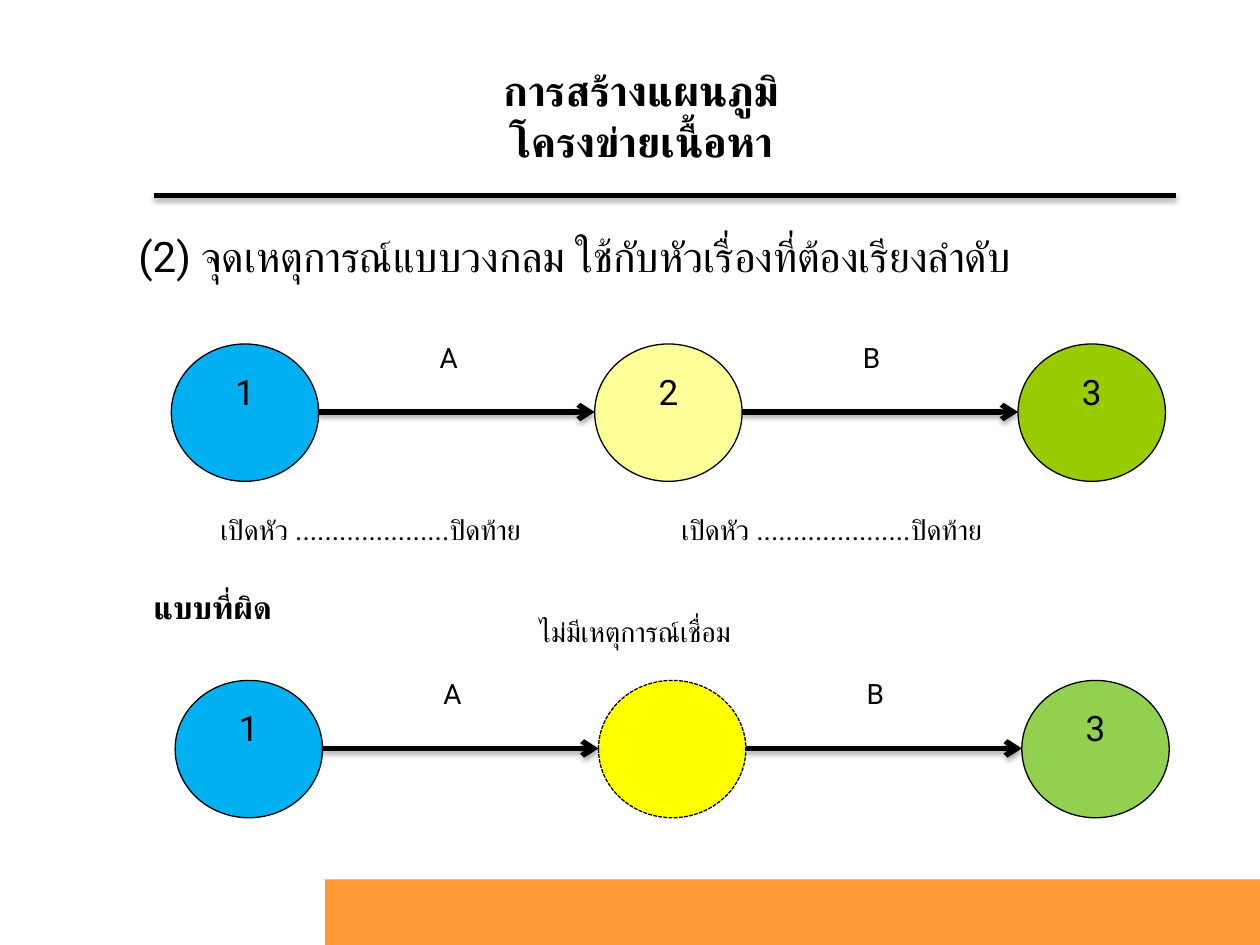
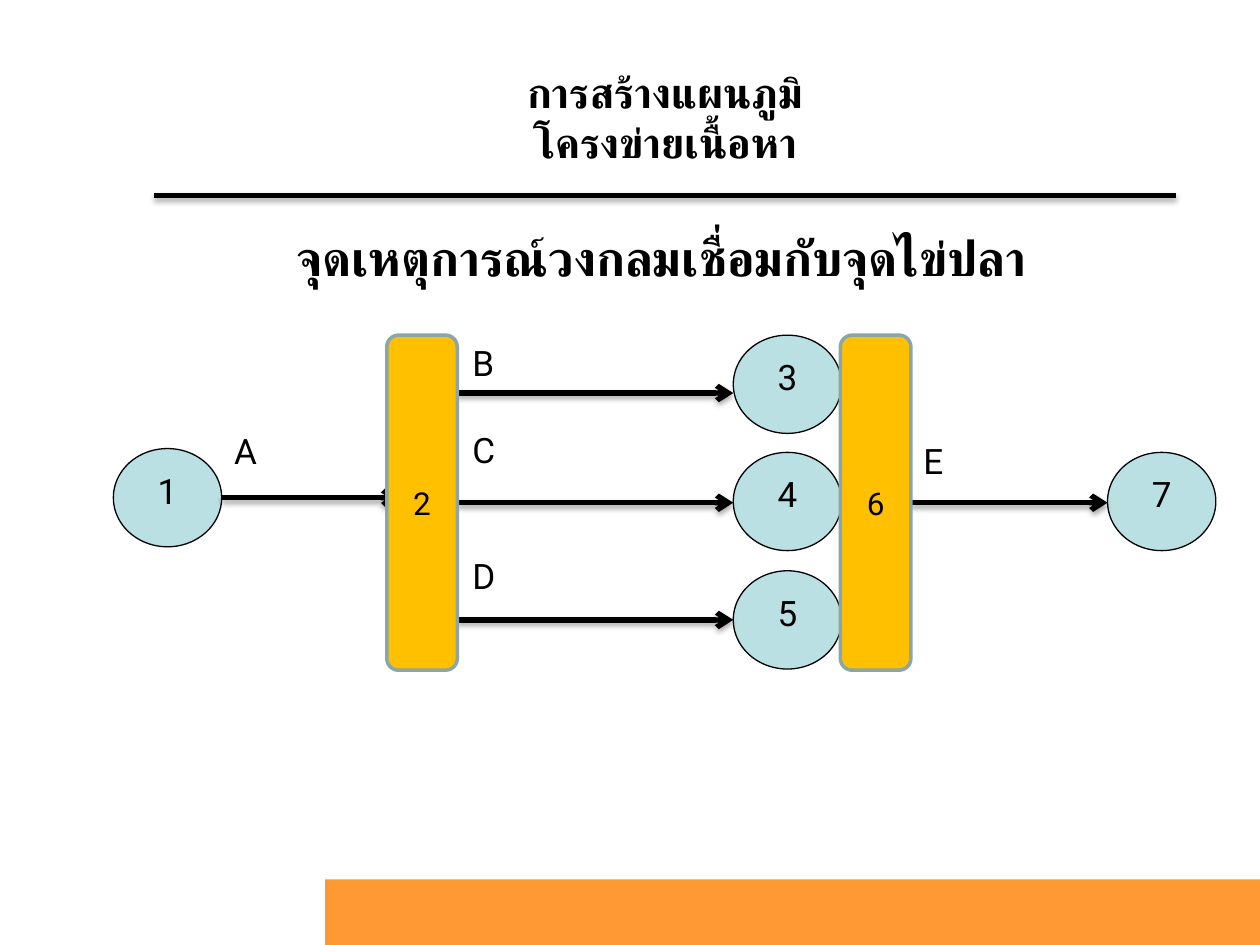
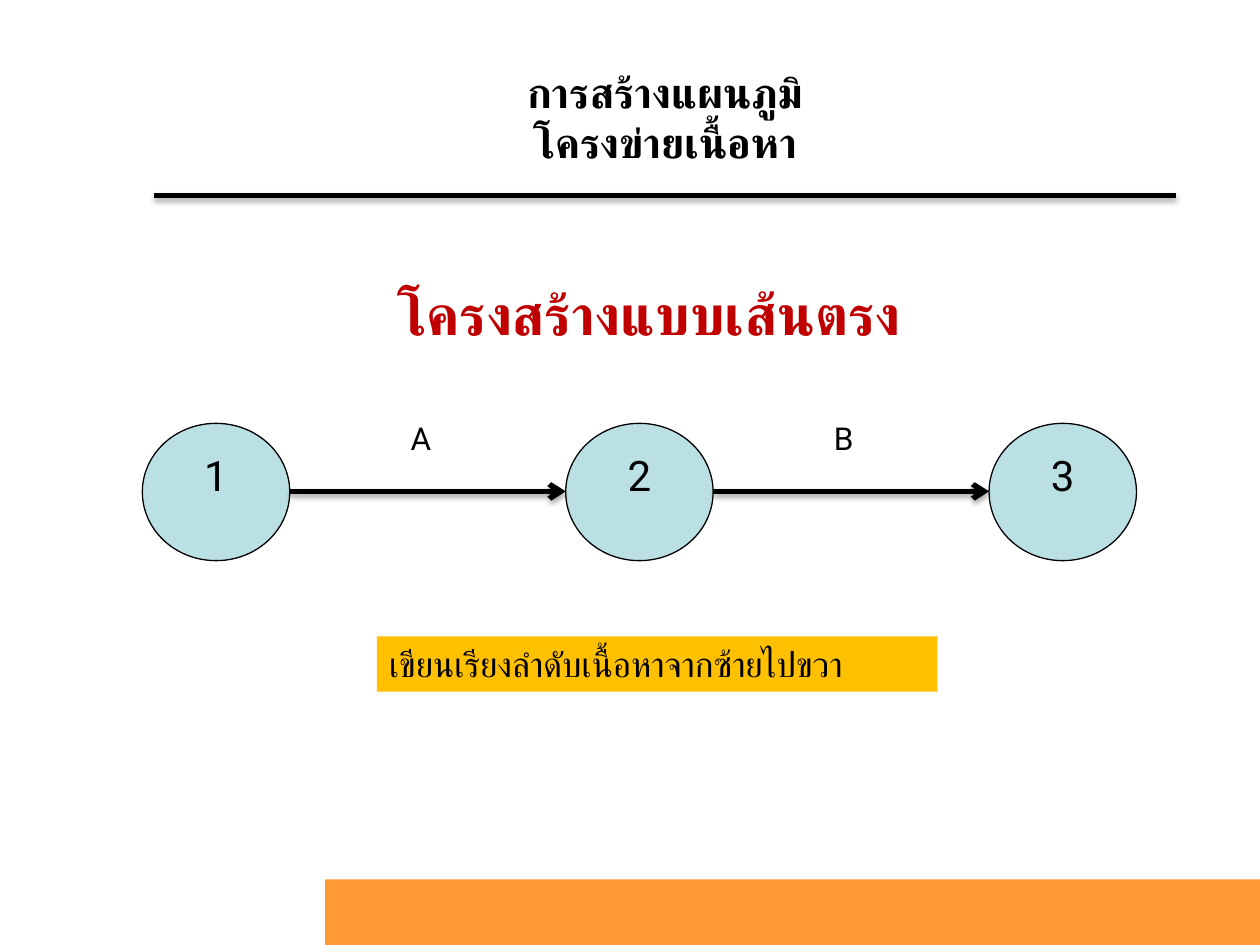
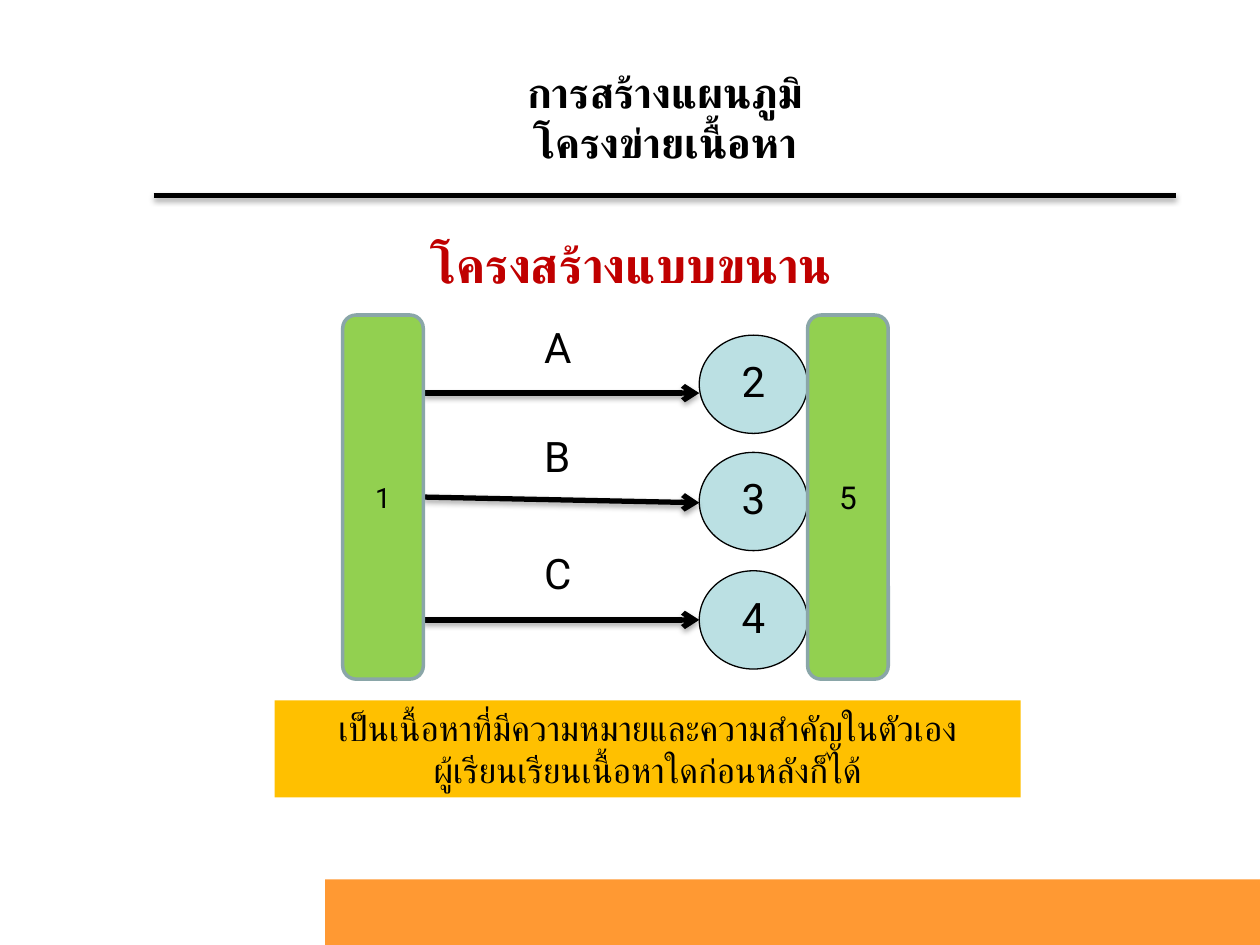
from dataclasses import dataclass

from lxml.etree import SubElement
from pptx import Presentation
from pptx.dml.color import RGBColor
from pptx.enum.dml import MSO_LINE
from pptx.enum.shapes import MSO_CONNECTOR, MSO_SHAPE
from pptx.enum.text import MSO_ANCHOR, PP_ALIGN
from pptx.oxml.ns import qn
from pptx.util import Emu, Pt

EMU_PER_PX = 9144  # 100 px to the inch


@dataclass(frozen=True)
class Theme:
    font: str = "Roboto"
    ink: str = "000000"
    red: str = "C00000"
    orange: str = "FF9933"
    gold: str = "FFC000"
    blue: str = "00B0F0"
    cream: str = "FFFF99"
    lime: str = "99CC00"
    yellow: str = "FFFF00"
    green: str = "92D050"
    aqua: str = "BBE0E3"
    bar_edge: str = "8AA6A8"
    caption: int = 16
    label: int = 18
    text: int = 20
    title: int = 24
    heading: int = 28
    big_heading: int = 32


THEME = Theme()
HEADER = "การสร้างแผนภูมิ\nโครงข่ายเนื้อหา"

# Chain of three circles
CHAIN_WIDTH, CHAIN_HEIGHT, CHAIN_PITCH = 117, 109, 336
CHAIN_LABEL_X, CHAIN_LABEL_Y = 203, -8

# Three parallel rows: an arrow leading to a circle
NODE_WIDTH, NODE_HEIGHT = 86, 78
ROW_ARROW_LENGTH = 219
ROW_HEIGHT_SUM = 187  # distance between the first and the third circle
ROW_ARROW_Y = (46, 133, 226)


def px(length):
    return Emu(length * EMU_PER_PX)


def color(code):
    return RGBColor.from_string(code)


# ---- Basic parts ----

def write(shape, text, size, ink=THEME.ink, bold=False, align=PP_ALIGN.LEFT,
          anchor=MSO_ANCHOR.TOP):
    frame = shape.text_frame
    frame.word_wrap = True
    frame.vertical_anchor = anchor
    for index, line in enumerate([text] if isinstance(text, str) else text):
        para = frame.add_paragraph() if index else frame.paragraphs[0]
        para.text = line
        para.alignment = align
        for span in para.runs:
            font = span.font
            font.name, font.size, font.bold = THEME.font, Pt(size), bold
            font.color.rgb = color(ink)
            SubElement(font._element, qn("a:cs"), typeface=THEME.font)


def add_text(page, box, text, size, **style):
    shape = page.shapes.add_textbox(*map(px, box))
    write(shape, text, size, **style)
    return shape


def add_title(page, box, text, size, ink=THEME.ink):
    add_text(page, box, text, size, ink=ink, bold=True,
             align=PP_ALIGN.CENTER, anchor=MSO_ANCHOR.MIDDLE)


def add_figure(page, kind, box, fill, edge=None, edge_width=0.75):
    shape = page.shapes.add_shape(kind, *map(px, box))
    shape.shadow.inherit = False
    shape.fill.solid()
    shape.fill.fore_color.rgb = color(fill)
    if edge:
        shape.line.color.rgb = color(edge)
        shape.line.width = Pt(edge_width)
    else:
        shape.line.fill.background()
    return shape


def add_circle(page, box, fill, text="", size=THEME.text):
    circle = add_figure(page, MSO_SHAPE.OVAL, box, fill, THEME.ink)
    if text:
        write(circle, text, size, align=PP_ALIGN.CENTER)
    return circle


def add_bar(page, box, fill, text, size=THEME.label):
    bar = add_figure(page, MSO_SHAPE.ROUNDED_RECTANGLE, box, fill, THEME.bar_edge, 2)
    write(bar, text, size, align=PP_ALIGN.CENTER, anchor=MSO_ANCHOR.MIDDLE)
    return bar


def add_note(page, box, text, align=PP_ALIGN.LEFT):
    note = add_figure(page, MSO_SHAPE.RECTANGLE, box, THEME.gold)
    write(note, text, THEME.text, align=align)


def add_line(page, left, right, y, arrow=True):
    line = page.shapes.add_connector(
        MSO_CONNECTOR.STRAIGHT, px(left), px(y), px(right), px(y))
    line.line.color.rgb = color(THEME.ink)
    line.line.width = Pt(3)
    if arrow:
        SubElement(line.line._get_or_add_ln(), qn("a:tailEnd"), type="arrow")
    # Soft shadow straight below the line
    effects = SubElement(line._element.spPr, qn("a:effectLst"))
    shadow = SubElement(effects, qn("a:outerShdw"), blurRad="40000", dist="23000",
                        dir="5400000", rotWithShape="0")
    tone = SubElement(shadow, qn("a:srgbClr"), val=THEME.ink)
    SubElement(tone, qn("a:alpha"), val="35000")
    return line


# ---- Regions ----

def add_frame(page, title_left=78, title_top=30):
    """Header, rule and footer band shared by all slides."""
    add_title(page, (title_left, title_top, 900, 125), HEADER, THEME.title)
    add_line(page, 122, 933, 155, arrow=False)
    add_figure(page, MSO_SHAPE.RECTANGLE, (258, 698, 742, 52), THEME.orange)


def add_chain(page, left, top, fills, numbers, number_size, label_size):
    """Three circles in a line, joined by the arrows A and B."""
    circles = []
    for index, (fill, number) in enumerate(zip(fills, numbers)):
        x = left + index * CHAIN_PITCH
        circles.append(add_circle(page, (x, top, CHAIN_WIDTH, CHAIN_HEIGHT),
                                  fill, number, number_size))
    for index, label in enumerate("AB"):
        x = left + index * CHAIN_PITCH
        add_line(page, x + CHAIN_WIDTH, x + CHAIN_PITCH, top + CHAIN_HEIGHT // 2)
        add_text(page, (x + CHAIN_LABEL_X, top + CHAIN_LABEL_Y, 38, 37),
                 label, label_size)
    return circles


def add_rows(page, left, top, labels, numbers, label_x, label_lifts, size):
    """Three labelled arrows to circles; returns the middle arrow."""
    arrows = []
    for index, label in enumerate(labels):
        arrow_y = top + ROW_ARROW_Y[index]
        circle_left = left + ROW_ARROW_LENGTH
        circle_top = top + index * ROW_HEIGHT_SUM // 2
        add_circle(page, (circle_left, circle_top, NODE_WIDTH, NODE_HEIGHT),
                   THEME.aqua, numbers[index], size)
        arrows.append(add_line(page, left, circle_left, arrow_y))
        add_text(page, (left + label_x, arrow_y - label_lifts[index], 38, 44),
                 label, size)
    return arrows[1]


# ---- Slides ----

def build_circle_events(page):
    body = add_text(page, (50, 178, 900, 78),
                    "(2)\tจุดเหตุการณ์แบบวงกลม ใช้กับหัวเรื่องที่ต้องเรียงลำดับ", THEME.title)
    indent = body.text_frame.paragraphs[0]._p.get_or_add_pPr()
    indent.set("marL", "0")
    indent.set("indent", str(px(50)))

    # Right way
    add_chain(page, 136, 273, (THEME.blue, THEME.cream, THEME.lime), "123",
              THEME.text, THEME.caption)
    for left in (165, 531):
        add_text(page, (left, 402, 300, 37),
                 "เปิดหัว .....................ปิดท้าย", THEME.caption)

    # Wrong way: nothing in the middle circle
    add_text(page, (112, 462, 125, 40), "แบบที่ผิด", THEME.label, bold=True)
    circles = add_chain(page, 139, 540, (THEME.blue, THEME.yellow, THEME.green),
                        ("1", "", "3"), THEME.text, THEME.caption)
    circles[1].line.dash_style = MSO_LINE.SQUARE_DOT
    add_text(page, (418, 483, 196, 37), "ไม่มีเหตุการณ์เชื่อม", THEME.caption)
    add_frame(page, 59, 29)


def build_joined_events(page):
    add_title(page, (75, 141, 900, 125), "จุดเหตุการณ์วงกลมเชื่อมกับจุดไข่ปลา",
              THEME.heading)
    middle_arrow = add_rows(page, 363, 266, "BCD", "345", 2, (46, 64, 57), THEME.text)

    # First and last event
    add_circle(page, (90, 356, NODE_WIDTH, NODE_HEIGHT), THEME.aqua, "1")
    add_circle(page, (879, 359, NODE_WIDTH, NODE_HEIGHT), THEME.aqua, "7")
    add_line(page, 176, 317, 395)
    add_text(page, (176, 336, 38, 44), "A", THEME.text)
    last_arrow = add_line(page, 723, 879, 399)
    add_text(page, (723, 344, 38, 44), "E", THEME.text)

    # Bars on top, each sending out an arrow
    for left, number, arrow in ((307, "2", middle_arrow), (667, "6", last_arrow)):
        bar = add_bar(page, (left, 266, 56, 266), THEME.gold, number)
        arrow.begin_connect(bar, 3)
    add_frame(page)


def build_linear_structure(page):
    add_title(page, (65, 186, 900, 125), "โครงสร้างแบบเส้นตรง",
              THEME.big_heading, THEME.red)
    add_chain(page, 113, 336, [THEME.aqua] * 3, "123", THEME.title, THEME.label)
    add_note(page, (299, 505, 445, 44), "เขียนเรียงลำดับเนื้อหาจากซ้ายไปขวา")
    add_frame(page)


def build_parallel_structure(page):
    add_title(page, (51, 147, 900, 125), "โครงสร้างแบบขนาน", THEME.heading, THEME.red)
    middle_arrow = add_rows(page, 336, 266, "ABC", "234", 86, (62, 62, 62), THEME.title)
    add_note(page, (218, 556, 592, 77),
             ("เป็นเนื้อหาที่มีความหมายและความสำคัญในตัวเอง",
              "ผู้เรียนเรียนเนื้อหาใดก่อนหลังก็ได้"), PP_ALIGN.CENTER)
    add_frame(page)

    # Bars that open and close the rows
    opening = add_bar(page, (272, 250, 64, 289), THEME.green, "1", THEME.caption)
    add_bar(page, (641, 250, 64, 289), THEME.green, "5")
    middle_arrow.begin_connect(opening, 3)


def main():
    deck = Presentation()
    deck.slide_width, deck.slide_height = px(1000), px(750)
    blank = deck.slide_layouts[6]
    for build in (build_circle_events, build_joined_events,
                  build_linear_structure, build_parallel_structure):
        build(deck.slides.add_slide(blank))
    deck.save("out.pptx")


if __name__ == "__main__":
    main()
